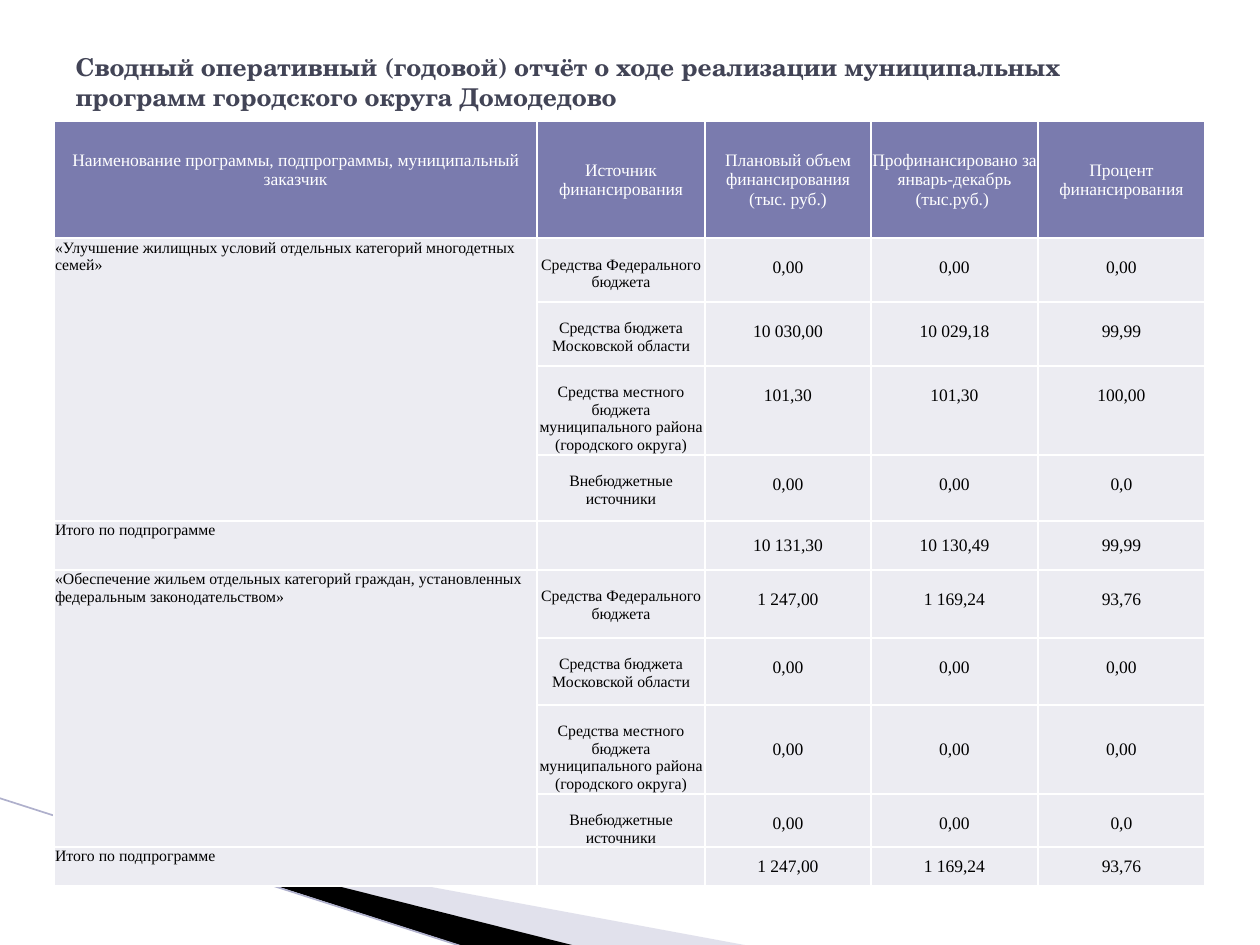
from dataclasses import dataclass

from lxml import etree
from pptx import Presentation
from pptx import util as u
from pptx.dml.color import RGBColor
from pptx.enum import shapes, text
from pptx.oxml.ns import qn

PX = 914400 / 126  # EMU in one px


@dataclass
class Theme:
    title_font: str = "TeX Gyre Schola"
    body_font: str = "Times New Roman"
    title_size: int = 14
    value_size: int = 10
    label_size: int = 9
    title: str = "424456"
    header: str = "7A7BAE"
    cell: str = "ECECF2"
    white: str = "FFFFFF"
    black: str = "000000"
    pale_band: str = "B6B6D1"
    edge: str = "AFB0CC"


theme = Theme()


def px(*lengths):
    return [u.Emu(round(length * PX)) for length in lengths]


def write_cell(cell, words, size, color, fill, centred=True, middle=True, top=1, bottom=0):
    cell.fill.solid()
    cell.fill.fore_color.rgb = RGBColor.from_string(fill)
    cell.margin_left, cell.margin_right, cell.margin_top, cell.margin_bottom = px(1, 1, top, bottom)
    cell.vertical_anchor = text.MSO_ANCHOR.MIDDLE if middle else text.MSO_ANCHOR.TOP
    cell.text = words
    paragraph = cell.text_frame.paragraphs[0]
    paragraph.alignment = text.PP_ALIGN.CENTER if centred else text.PP_ALIGN.LEFT
    paragraph.font.name = theme.body_font
    paragraph.font.size = u.Pt(size)
    paragraph.font.color.rgb = RGBColor.from_string(color)
    # White rule on every side
    properties = cell._tc.get_or_add_tcPr()
    for position, side in enumerate(("a:lnL", "a:lnR", "a:lnT", "a:lnB")):
        rule = etree.Element(qn(side), w=str(u.Pt(1)))
        rule_fill = etree.SubElement(rule, qn("a:solidFill"))
        etree.SubElement(rule_fill, qn("a:srgbClr"), val=theme.white)
        properties.insert(position, rule)


prs = Presentation()
prs.slide_width, prs.slide_height = px(1260, 945)
slide = prs.slides.add_slide(prs.slide_layouts[5])

# Title
title = slide.shapes.title
title.left, title.top, title.width, title.height = px(63, 38, 1134, 87)
title.text_frame.text = ("Сводный оперативный (годовой) отчёт о ходе реализации "
                         "муниципальных программ городского округа Домодедово")
title.text_frame.vertical_anchor = text.MSO_ANCHOR.MIDDLE
heading = title.text_frame.paragraphs[0]
heading.alignment = text.PP_ALIGN.LEFT
heading.font.name = theme.title_font
heading.font.size = u.Pt(theme.title_size)
heading.font.bold = True
heading.font.color.rgb = RGBColor.from_string(theme.title)

# Corner bands
bands = [
    (theme.pale_band, 40, [(69, 820), (750, 946), (575, 946), (69, 819)]),
    (theme.black, 100, [(67, 818), (576, 946), (469, 948), (68, 819)]),
]
for color, opacity, corners in bands:
    outline = slide.shapes.build_freeform(*corners[0], scale=PX)
    outline.add_line_segments(corners[1:], close=True)
    band = outline.convert_to_shape()
    band.shadow.inherit = False
    band.line.fill.background()
    band.fill.solid()
    band.fill.fore_color.rgb = RGBColor.from_string(color)
    if opacity < 100:
        tint = band._element.spPr.find(".//" + qn("a:srgbClr"))
        etree.SubElement(tint, qn("a:alpha"), val=str(opacity * 1000))

edge = slide.shapes.add_connector(shapes.MSO_CONNECTOR.STRAIGHT, *px(-1, 798, 467, 948))
edge.line.color.rgb = RGBColor.from_string(theme.edge)
edge.line.width = u.Pt(0.95)
etree.SubElement(edge._element.spPr, qn("a:effectLst"))

# Report content
headers = ["Наименование программы, подпрограммы, муниципальный заказчик",
           "Источник финансирования",
           "Плановый объем финансирования (тыс. руб.)",
           "Профинансировано за январь-декабрь (тыс.руб.) ",
           "Процент финансирования"]
sources = ["Средства Федерального бюджета",
           "Средства бюджета Московской области",
           "Средства местного бюджета муниципального района (городского округа)",
           "Внебюджетные источники"]
subprograms = [
    ("«Улучшение жилищных условий отдельных категорий многодетных семей»",
     [("0,00", "0,00", "0,00"), ("10 030,00", "10 029,18", "99,99"),
      ("101,30", "101,30", "100,00"), ("0,00", "0,00", "0,0")],
     ("10 131,30", "10 130,49", "99,99")),
    ("«Обеспечение жильем отдельных категорий граждан, установленных федеральным законодательством»",
     [("1 247,00", "1 169,24", "93,76"), ("0,00", "0,00", "0,00"),
      ("0,00", "0,00", "0,00"), ("0,00", "0,00", "0,0")],
     ("1 247,00", "1 169,24", "93,76")),
]
column_widths = [483, 168, 166, 167, 167]
row_heights = [117, 64, 64, 89, 66, 49, 68, 67, 89, 53, 39]
middle_rows = {5, 8, 10}  # rows whose amounts sit at mid-height

# Table
report = slide.shapes.add_table(len(row_heights), len(column_widths),
                                *px(54, 121, sum(column_widths), sum(row_heights))).table
report.first_row = report.horz_banding = False
for column, width in zip(report.columns, px(*column_widths)):
    column.width = width
for row, height in zip(report.rows, px(*row_heights)):
    row.height = height

for column, header in enumerate(headers):
    write_cell(report.cell(0, column), header, theme.value_size, theme.white,
               theme.header, bottom=0 if column else 20)

for block, (name, amounts, total) in enumerate(subprograms):
    first = 1 + block * (len(sources) + 1)
    last = first + len(sources)
    names = [name] + [""] * (len(sources) - 1) + ["Итого по подпрограмме"]
    for row, label, source, values in zip(range(first, last + 1), names,
                                          sources + [""], amounts + [total]):
        write_cell(report.cell(row, 0), label, theme.label_size, theme.black,
                   theme.cell, centred=False, middle=False)
        write_cell(report.cell(row, 1), source, theme.label_size, theme.black,
                   theme.cell, middle=False, top=18 if source else 1)
        middle = row in middle_rows
        for column, value in enumerate(values, start=2):
            write_cell(report.cell(row, column), value, theme.value_size, theme.black,
                       theme.cell, middle=middle, top=1 if middle else 20)
    report.cell(first, 0).merge(report.cell(last - 1, 0))

prs.save("out.pptx")
